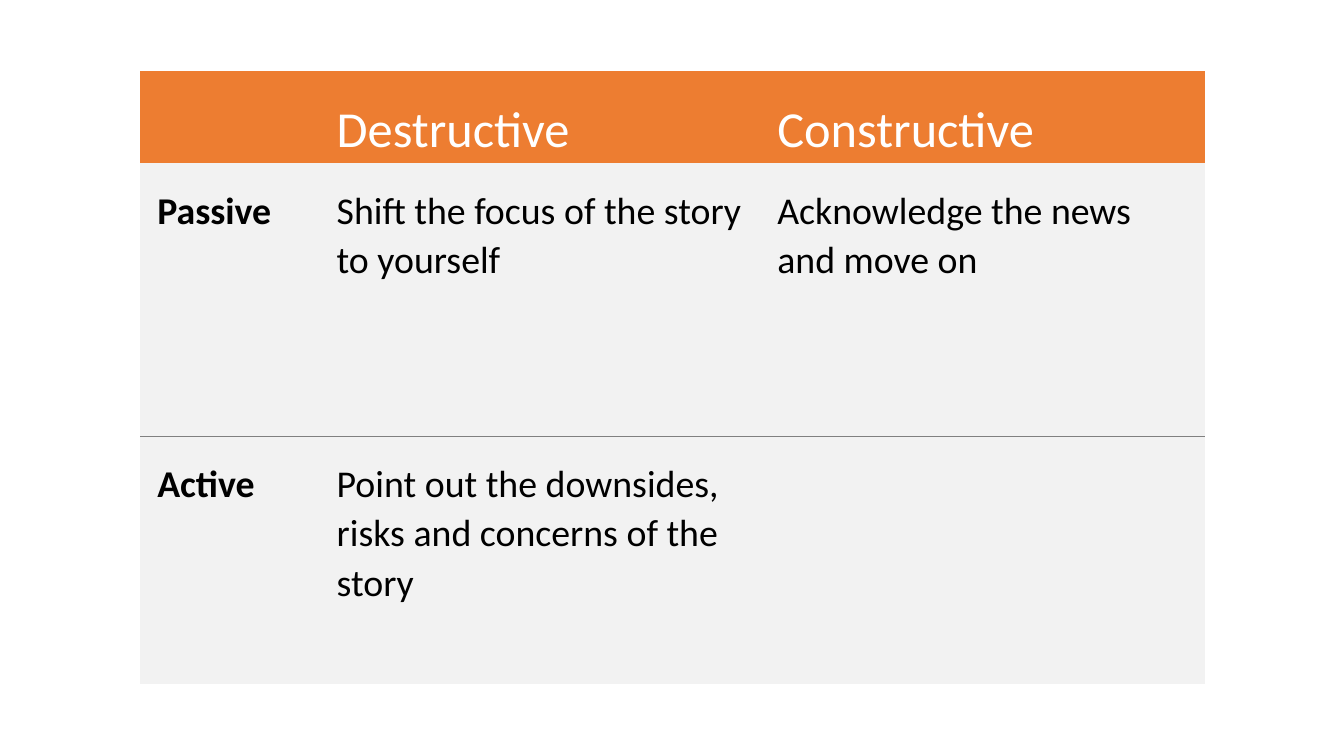
from lxml import etree
from pptx import Presentation
from pptx.dml.color import RGBColor
from pptx.enum import text
from pptx.oxml import ns
from pptx.util import Inches, Pt

COLORS = {"header": "ED7D31", "body": "F2F2F2", "rule": "808080",
          "header_text": "FFFFFF", "body_text": "000000"}
FONT = "Calibri"
NO_STYLE = "{2D5ABB26-0587-4C30-8999-92F81FD0307C}"
COLUMNS = [1.78, 4.37, 4.41]
ROWS = [0.92, 2.71, 2.46]
RESPONSES = [
    ["", "Destructive", "Constructive"],
    ["Passive", "Shift the focus of the story to yourself",
     "Acknowledge the news and move on"],
    ["Active", "Point out the downsides, risks and concerns of the story", ""],
]
MARGINS = {"margin_left": 0.17, "margin_top": 0.22,
           "margin_right": 0.17, "margin_bottom": 0}


def rgb(name):
    return RGBColor.from_string(COLORS[name])


def add_border(cell, side):
    """Draw a thin rule on one side of a cell: "lnT" or "lnB"."""
    ln = etree.Element(ns.qn(f"a:{side}"), w=str(Pt(0.75)))
    fill = etree.SubElement(ln, ns.qn("a:solidFill"))
    etree.SubElement(fill, ns.qn("a:srgbClr"), val=COLORS["rule"])
    # Borders must come before the fill in the cell properties
    cell._tc.get_or_add_tcPr().insert(0, ln)


def write_cell(cell, words, size, color, bold):
    for name, inches in MARGINS.items():
        setattr(cell, name, Inches(inches))
    p = cell.text_frame.paragraphs[0]
    p.line_spacing = 1.07
    p.space_after = Pt(8)
    r = p.add_run()
    r.text = words
    for name, value in {"name": FONT, "size": Pt(size), "bold": bold}.items():
        setattr(r.font, name, value)
    r.font.color.rgb = rgb(color)


def fill_cell(cell, row, col):
    part = "body" if row else "header"
    cell.fill.solid()
    cell.fill.fore_color.rgb = rgb(part)
    words = RESPONSES[row][col]
    if words:
        write_cell(cell, words, 27 if row else 36, f"{part}_text",
                   bool(row) and col == 0)
    if row:
        add_border(cell, "lnB" if row == 1 else "lnT")
    else:
        cell.vertical_anchor = text.MSO_ANCHOR.MIDDLE


def add_response_table(s):
    frame = s.shapes.add_table(len(ROWS), len(COLUMNS), Inches(1.39), Inches(0.7),
                               Inches(sum(COLUMNS)), Inches(sum(ROWS)))
    table = frame.table
    table.horz_banding = False
    next(frame.element.iter(ns.qn("a:tableStyleId"))).text = NO_STYLE
    for column, width in zip(table.columns, COLUMNS):
        column.width = Inches(width)
    for row, height in enumerate(ROWS):
        table.rows[row].height = Inches(height)
        for col in range(len(COLUMNS)):
            fill_cell(table.cell(row, col), row, col)


def main():
    prs = Presentation()
    prs.slide_width, prs.slide_height = Inches(13.33), Inches(7.5)
    s = prs.slides.add_slide(prs.slide_layouts[6])
    add_response_table(s)
    prs.save("out.pptx")


if __name__ == "__main__":
    main()
